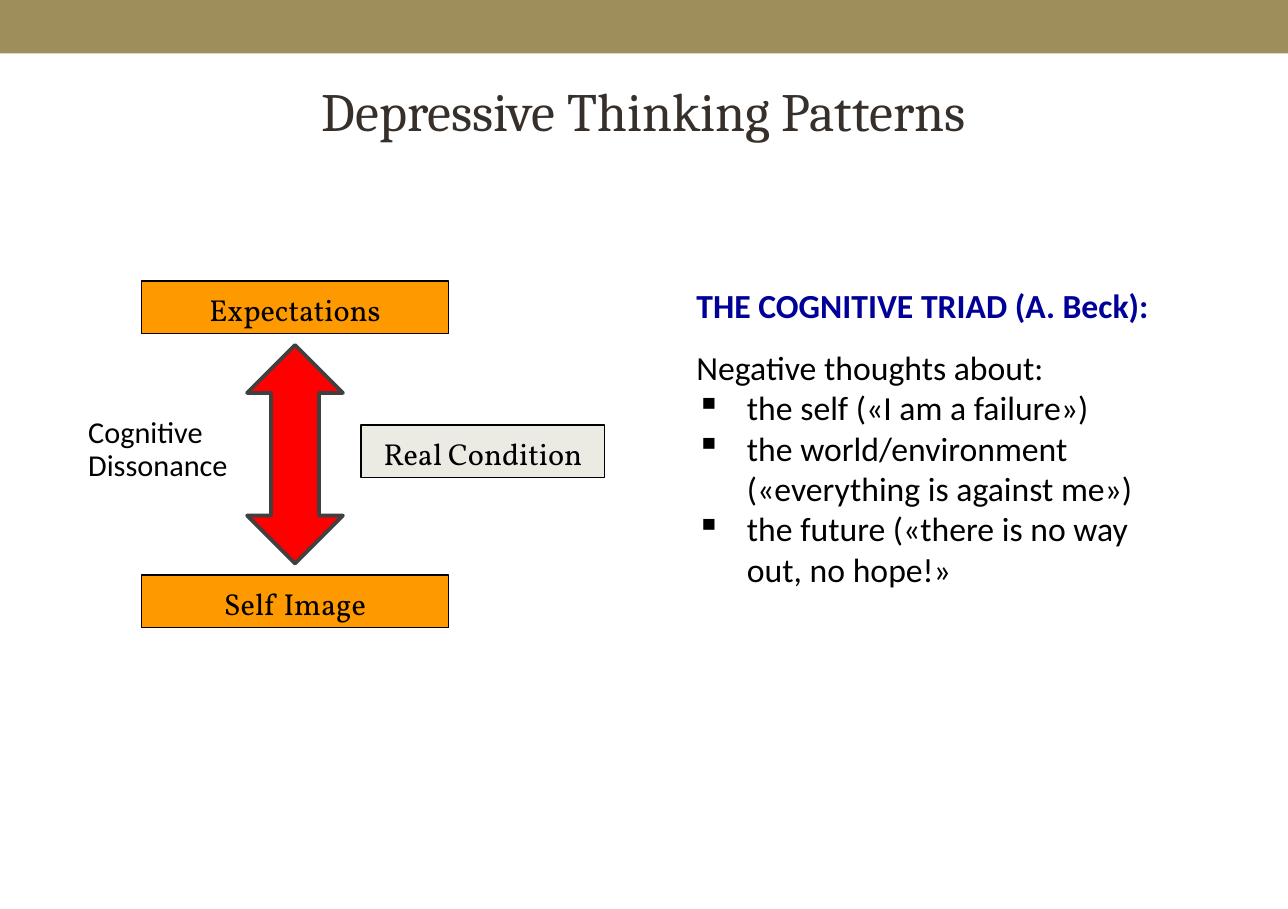
"""Builds a slide on depressive thinking patterns."""
from lxml import etree
from pptx import Presentation
from pptx.dml.color import RGBColor
from pptx.enum.shapes import MSO_SHAPE
from pptx.enum.text import MSO_ANCHOR, PP_ALIGN
from pptx.oxml.ns import qn
from pptx.util import Cm, Pt

RECTANGLE = MSO_SHAPE.RECTANGLE
DOUBLE_ARROW = MSO_SHAPE.UP_DOWN_ARROW
TOP, MIDDLE = MSO_ANCHOR.TOP, MSO_ANCHOR.MIDDLE
LEFT, CENTER = PP_ALIGN.LEFT, PP_ALIGN.CENTER

COLORS = {
    "band": "9E8E5C",
    "title": "37302A",
    "heading": "000099",
    "text": "000000",
    "concept": "FF9900",
    "reality": "ECEBE3",
    "arrow": "FF0000",
    "arrow_line": "404040",
}
THOUGHTS = [
    "the self («I am a failure»)",
    "the world/environment («everything is against me»)",
    "the future («there is no way out, no hope!»",
]


def color(name):
    """Return the named colour."""
    return RGBColor.from_string(COLORS[name])


def add_run(paragraph, text, font, size, color_name="text", bold=False):
    """Append a formatted run to a paragraph."""
    run = paragraph.add_run()
    run.text = text
    run.font.name = font
    run.font.size = Pt(size)
    run.font.bold = bold
    run.font.color.rgb = color(color_name)


def add_text_box(slide, box, anchor=TOP, wrap=True):
    """Add a text box at (left, top, width, height) and return its frame."""
    frame = slide.shapes.add_textbox(*map(Cm, box)).text_frame
    frame.word_wrap = wrap
    frame.vertical_anchor = anchor
    return frame


def add_filled_shape(slide, kind, box, fill, line=None, line_width=0.75):
    """Add a flat shape, outlined only when a line colour is given."""
    shape = slide.shapes.add_shape(kind, *map(Cm, box))
    shape.shadow.inherit = False
    shape.fill.solid()
    shape.fill.fore_color.rgb = color(fill)
    if line:
        shape.line.color.rgb = color(line)
        shape.line.width = Pt(line_width)
    else:
        shape.line.fill.background()
    return shape


def add_concept(slide, box, text, fill):
    """Add a labelled rectangle of the diagram."""
    frame = add_filled_shape(slide, RECTANGLE, box, fill, "text").text_frame
    frame.word_wrap = True
    frame.vertical_anchor = MIDDLE
    paragraph = frame.paragraphs[0]
    paragraph.alignment = CENTER
    paragraph.line_spacing = 1.1
    add_run(paragraph, text, "Vollkorn", 18)


def add_title(slide, box):
    """Add the centred slide title."""
    paragraph = add_text_box(slide, box, MIDDLE).paragraphs[0]
    paragraph.alignment = CENTER
    add_run(paragraph, "Depressive Thinking Patterns", "Cambria", 32, "title")


def add_dissonance_diagram(slide, box):
    """Add the two opposed concepts, their arrow and the side labels."""
    left, top, width, height = box
    concept_left, concept_width, concept_height = left + 1.37, 6.43, 1.1
    arrow_width, gap = 2.01, 0.24
    bottom_top = top + height - concept_height
    for concept_top, text in ((top, "Expectations"), (bottom_top, "Self Image")):
        concept_box = (concept_left, concept_top, concept_width, concept_height)
        add_concept(slide, concept_box, text, "concept")

    reality_width = 5.11
    reality_box = (left + width - reality_width, top + 3.02,
                   reality_width, concept_height)
    add_concept(slide, reality_box, "Real Condition", "reality")

    frame = add_text_box(slide, (left, top + 2.74, 3.48, 1.65), wrap=False)
    paragraph = frame.paragraphs[0]
    paragraph.line_spacing = 0.9
    add_run(paragraph, "Cognitive", "Calibri", 18)
    paragraph.add_line_break()
    add_run(paragraph, "Dissonance", "Calibri", 18)

    arrow_box = (concept_left + (concept_width - arrow_width) / 2,
                 top + concept_height + gap,
                 arrow_width, height - 2 * (concept_height + gap))
    add_filled_shape(slide, DOUBLE_ARROW, arrow_box, "arrow", "arrow_line", 2.25)


def add_bullet(paragraph, character):
    """Give a paragraph a hanging bullet."""
    properties = paragraph._p.get_or_add_pPr()
    properties.set("marL", str(Cm(1.06)))
    properties.set("indent", str(-Cm(1.06)))
    etree.SubElement(properties, qn("a:buChar")).set("char", character)


def add_cognitive_triad(slide, box):
    """Add the triad heading and the list of negative thoughts."""
    left, top, width, height = box
    heading = add_text_box(slide, (left, top, width, 1.12)).paragraphs[0]
    add_run(heading, "THE COGNITIVE TRIAD (A. Beck):", "Calibri", 20, "heading", True)

    list_offset = 1.3
    frame = add_text_box(slide, (left, top + list_offset, width, height - list_offset))
    frame.paragraphs[0].alignment = LEFT
    add_run(frame.paragraphs[0], "Negative thoughts about:", "Calibri", 20)
    for thought in THOUGHTS:
        paragraph = frame.add_paragraph()
        add_bullet(paragraph, "▪")
        add_run(paragraph, thought, "Calibri", 20)


def main():
    """Build and save the presentation."""
    presentation = Presentation()
    presentation.slide_width = Cm(27)
    presentation.slide_height = Cm(19.05)
    slide = presentation.slides.add_slide(presentation.slide_layouts[6])
    add_filled_shape(slide, RECTANGLE, (0, 0, 27, 1.12), "band")
    add_title(slide, (1.35, 0.91, 24.3, 2.8))
    add_dissonance_diagram(slide, (1.6, 5.89, 11.08, 7.26))
    add_cognitive_triad(slide, (14.35, 5.84, 10.64, 6.68))
    presentation.save("out.pptx")


if __name__ == "__main__":
    main()
